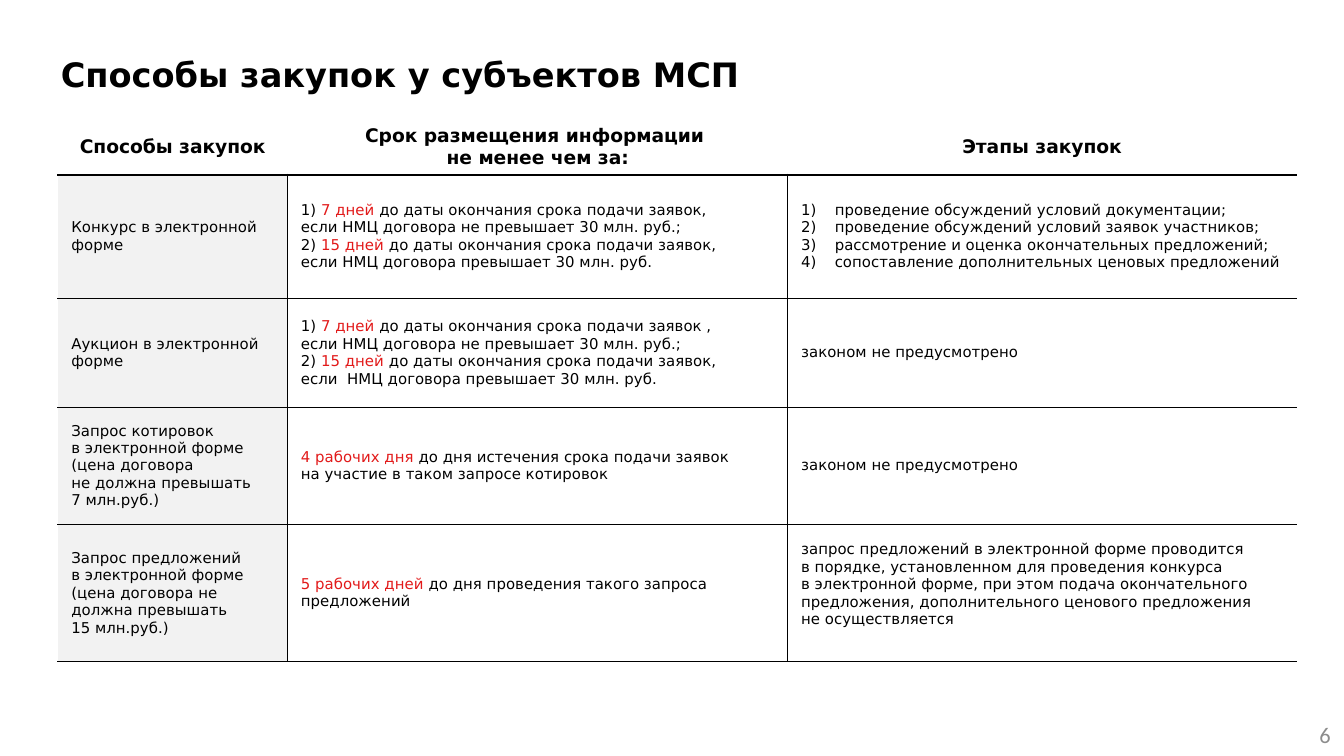
from dataclasses import dataclass

from lxml.etree import SubElement as Sub
from pptx import Presentation
from pptx.dml.color import RGBColor as Rgb
from pptx.enum.text import MSO_ANCHOR as Anchor
from pptx.enum.text import MSO_AUTO_SIZE as Auto
from pptx.enum.text import PP_ALIGN as Align
from pptx.oxml.ns import qn
from pptx.util import Pt


@dataclass(frozen=True)
class Theme:
    font: str = "DejaVu Sans"
    foot: str = "Calibri"
    ink: str = "000000"
    red: str = "E21A1A"
    gray: str = "8C8C8C"
    pale: str = "F2F2F2"
    white: str = "FFFFFF"
    title: float = 18
    head: float = 10
    body: float = 8
    page: float = 12


T = Theme()
COLS = (123, 268, 272.5)
ROWS = (29.5, 66.2, 58.4, 62.7, 73.7)
NONE = ("законом не предусмотрено",)

HEADS = (
    "Способы закупок",
    "Срок размещения информации \nне менее чем за:",
    "Этапы закупок",
)
BODY = (
    (
        ("Конкурс в электронной форме",),
        (
            "1) *7 дней *до даты окончания срока подачи заявок, \n"
            "если НМЦ договора не превышает 30 млн. руб.;",
            "2) *15 дней *до даты окончания срока подачи заявок, \n"
            "если НМЦ договора превышает 30 млн. руб.",
        ),
        (
            "проведение обсуждений условий документации;",
            "проведение обсуждений условий заявок участников;",
            "рассмотрение и оценка окончательных предложений;",
            "сопоставление дополнительных ценовых предложений",
        ),
    ),
    (
        ("Аукцион в электронной форме",),
        (
            "1) *7 дней *до даты окончания срока подачи заявок , \n"
            "если НМЦ договора не превышает 30 млн. руб.;",
            "2) *15 дней *до даты окончания срока подачи заявок, \n"
            "если  НМЦ договора превышает 30 млн. руб.",
        ),
        NONE,
    ),
    (
        (
            "Запрос котировок \nв электронной форме",
            "(цена договора \nне должна превышать \n7 млн.руб.)",
        ),
        (
            "*4 рабочих дня *до дня истечения срока подачи заявок \n"
            "на участие в таком запросе котировок",
        ),
        NONE,
    ),
    (
        (
            "Запрос предложений \nв электронной форме",
            "(цена договора не должна превышать \n15 млн.руб.)",
        ),
        ("*5 рабочих дней *до дня проведения такого запроса предложений",),
        (
            "запрос предложений в электронной форме проводится \n"
            "в порядке, установленном для проведения конкурса \n"
            "в электронной форме, при этом подача окончательного "
            "предложения, дополнительного ценового предложения \n"
            "не осуществляется",
        ),
    ),
)


def number(para):
    props = para._p.get_or_add_pPr()
    props.set("marL", str(Pt(18)))
    props.set("indent", str(-Pt(18)))
    Sub(props, qn("a:buAutoNum"), type="arabicParenR")


def write(frame, paras, size=T.body, font=T.font, color=T.ink, bold=False,
          align=Align.LEFT, list_=False):
    frame.word_wrap = True
    for i, text in enumerate(paras):
        para = frame.add_paragraph() if i else frame.paragraphs[0]
        para.alignment = align
        if list_:
            number(para)
        for j, part in enumerate(text.split("*")):
            for k, line in enumerate(part.split("\n")):
                if k:
                    para.add_line_break()
                if line:
                    run = para.add_run()
                    run.text = line
                    run.font.size = Pt(size)
                    run.font.name = font
                    run.font.bold = bold
                    run.font.color.rgb = Rgb.from_string(T.red if j % 2 else color)


def box(slide, area, text, **form):
    frame = slide.shapes.add_textbox(*map(Pt, area)).text_frame
    write(frame, (text,), **form)
    return frame


def edge(cell, side, color, width):
    line = Sub(cell._tc.get_or_add_tcPr(), qn(f"a:ln{side}"), w=str(Pt(width)))
    Sub(Sub(line, qn("a:solidFill")), qn("a:srgbClr"), val=color)


def frame_cell(cell, row, col):
    thin, none = (T.ink, 0.75), (T.white, 0.5)
    thick = (T.ink, 1.5)
    edge(cell, "L", *(thin if row and col else none))
    edge(cell, "R", *(thin if row and col < len(COLS) - 1 else none))
    edge(cell, "T", *(none if row == 0 else thick if row == 1 else thin))
    edge(cell, "B", *(thin if row else thick))


def style(cell, row, col):
    frame_cell(cell, row, col)
    cell.vertical_anchor = Anchor.MIDDLE
    cell.margin_left = cell.margin_right = Pt(7.2)
    cell.margin_top = cell.margin_bottom = Pt(2.8)
    if row and col == 0:
        cell.fill.solid()
        cell.fill.fore_color.rgb = Rgb.from_string(T.pale)
    else:
        cell.fill.background()


def grid(slide):
    shape = slide.shapes.add_table(
        len(ROWS), len(COLS), Pt(31), Pt(64), Pt(sum(COLS)), Pt(sum(ROWS)))
    table = shape.table
    table.first_row = table.horz_banding = False
    for col, width in zip(table.columns, COLS):
        col.width = Pt(width)
    for row, height in zip(table.rows, ROWS):
        row.height = Pt(height)
    for c, text in enumerate(HEADS):
        cell = table.cell(0, c)
        style(cell, 0, c)
        write(cell.text_frame, (text,), size=T.head, bold=True, align=Align.CENTER)
    for r, line in enumerate(BODY, 1):
        for c, paras in enumerate(line):
            cell = table.cell(r, c)
            style(cell, r, c)
            write(cell.text_frame, paras, list_=len(paras) > 2)
    table.cell(len(BODY), 2).margin_bottom = Pt(12)


def main():
    deck = Presentation()
    deck.slide_width, deck.slide_height = Pt(720), Pt(405)
    slide = deck.slides.add_slide(deck.slide_layouts[6])
    title = box(slide, (25.5, 28, 544, 27), "Способы закупок у субъектов МСП",
                size=T.title, bold=True)
    title.auto_size = Auto.SHAPE_TO_FIT_TEXT
    title.paragraphs[0].line_spacing = 0.9
    title.paragraphs[0].space_before = Pt(6)
    grid(slide)
    page = box(slide, (552, 383, 168, 21.6), "6", size=T.page, font=T.foot,
               color=T.gray, align=Align.RIGHT)
    page.vertical_anchor = Anchor.MIDDLE
    deck.save("out.pptx")


if __name__ == "__main__":
    main()
